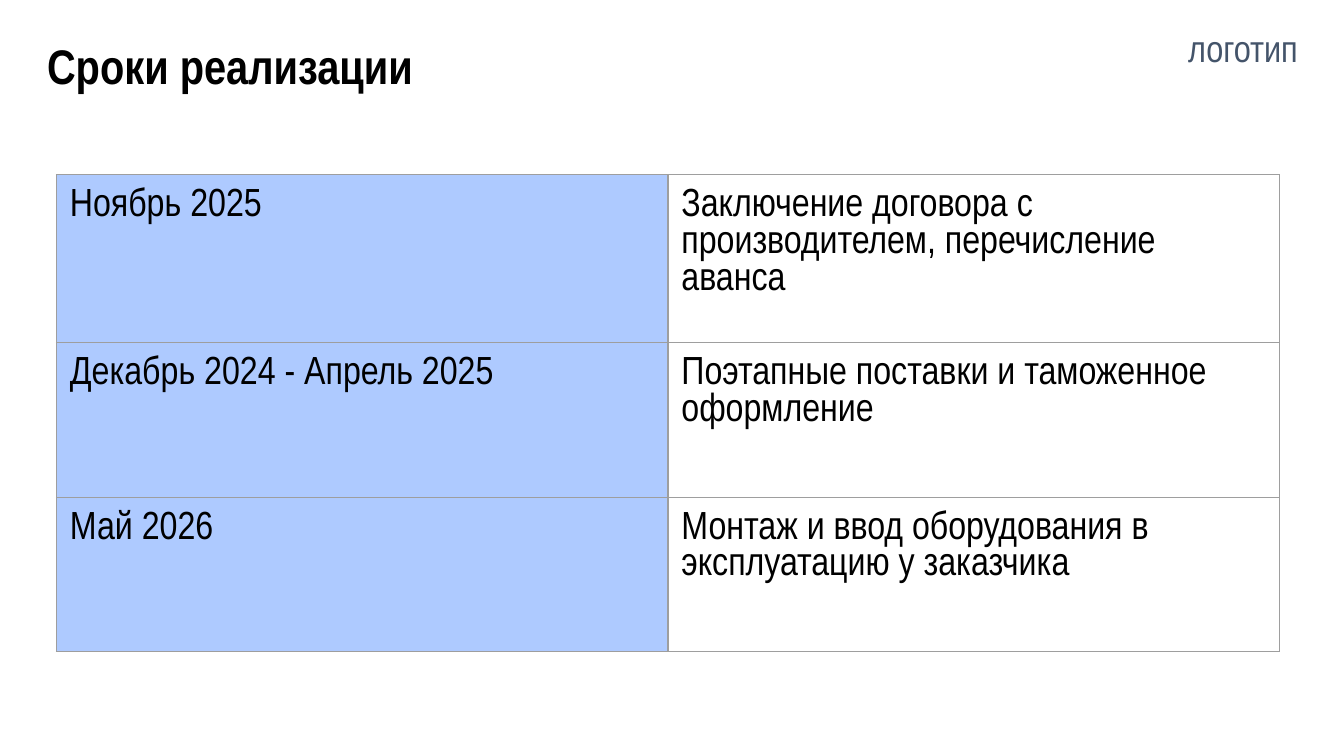
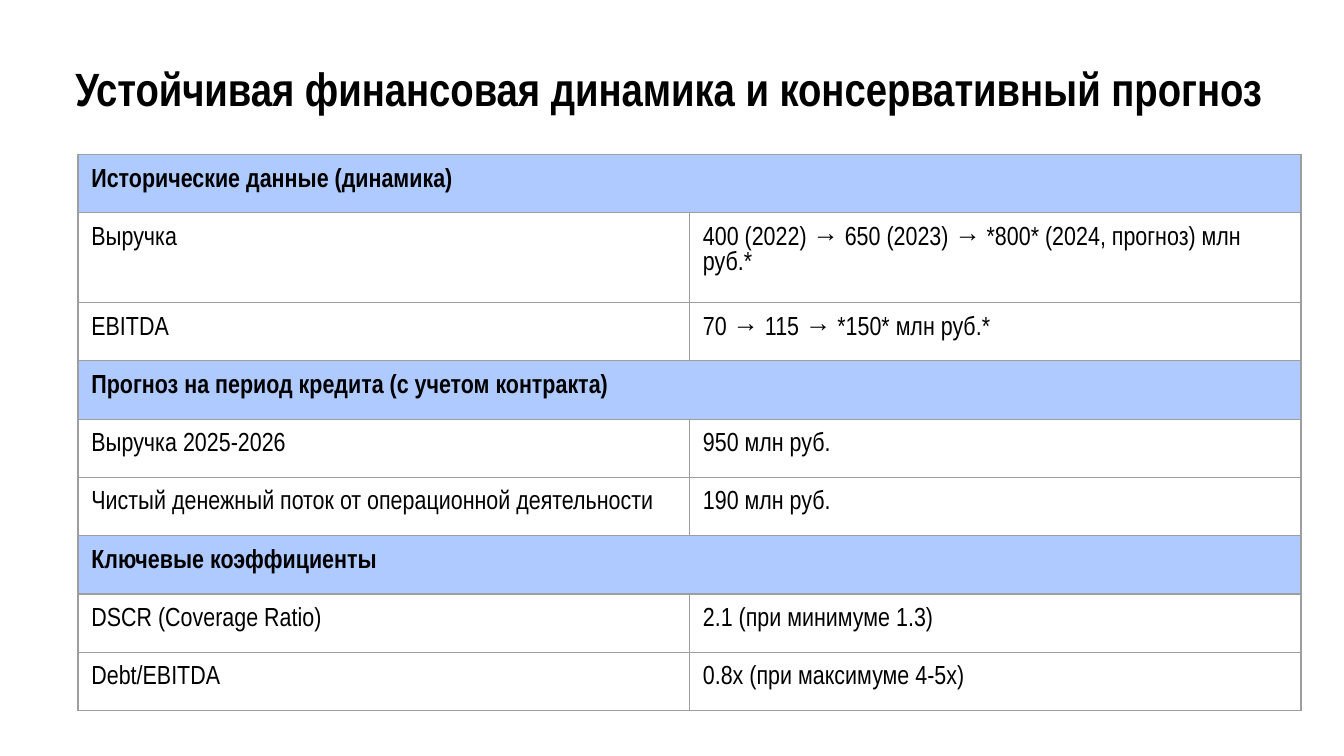
import pptx
import pptx.dml.color
import pptx.enum.text
import pptx.oxml
import pptx.oxml.ns
import pptx.util

Inches = pptx.util.Inches
Pt = pptx.util.Pt
RGBColor = pptx.dml.color.RGBColor

SLIDE_WIDTH = 10
SLIDE_HEIGHT = SLIDE_WIDTH * 9 / 16
FONT = "Arial Narrow"
BLACK = RGBColor(0x00, 0x00, 0x00)
SLATE = RGBColor(0x44, 0x54, 0x6A)
LIGHT_BLUE = RGBColor(0xAE, 0xCA, 0xFF)
BORDER_GREY = RGBColor(0x9E, 0x9E, 0x9E)
BORDER_WIDTH = Pt(0.75)
COLUMN_WIDTH = 4.55
CELL_MARGIN = 0.1
TITLE_ONLY_LAYOUT = 5

SCHEDULE_TITLE = "Сроки реализации"
LOGO_LABEL = "логотип"
SCHEDULE = [
    ("Ноябрь 2025", "Заключение договора с производителем, перечисление аванса"),
    ("Декабрь 2024 - Апрель 2025", "Поэтапные поставки и таможенное оформление"),
    ("Май 2026", "Монтаж и ввод оборудования в эксплуатацию у заказчика"),
]

FINANCE_TITLE = "Устойчивая финансовая динамика и консервативный прогноз"
# A row with a single entry is a section heading across both columns.
FINANCE = [
    ("Исторические данные (динамика)",),
    ("Выручка", "400 (2022) → 650 (2023) → *800* (2024, прогноз) млн руб.*"),
    ("EBITDA", "70 → 115 → *150* млн руб.*"),
    ("Прогноз на период кредита (с учетом контракта)",),
    ("Выручка 2025-2026", "950 млн руб."),
    ("Чистый денежный поток от операционной деятельности", "190 млн руб."),
    ("Ключевые коэффициенты",),
    ("DSCR (Coverage Ratio)", "2.1 (при минимуме 1.3)"),
    ("Debt/EBITDA", "0.8x (при максимуме 4-5x)"),
]


def write_text(text_frame, text, size, color=BLACK, bold=False, line_spacing=None):
    paragraph = text_frame.paragraphs[0]
    paragraph.alignment = pptx.enum.text.PP_ALIGN.LEFT
    if line_spacing:
        paragraph.line_spacing = line_spacing
    run = paragraph.add_run()
    run.text = text
    run.font.name = FONT
    run.font.size = Pt(size)
    run.font.bold = bold
    run.font.color.rgb = color


def format_frame(text_frame):
    text_frame.word_wrap = True
    text_frame.auto_size = pptx.enum.text.MSO_AUTO_SIZE.SHAPE_TO_FIT_TEXT
    text_frame.vertical_anchor = pptx.enum.text.MSO_ANCHOR.TOP
    text_frame.margin_left = text_frame.margin_right = Inches(0.07)
    text_frame.margin_top = text_frame.margin_bottom = Inches(0.04)


def add_titled_slide(presentation, title, left, top, width, height, size):
    slide = presentation.slides.add_slide(presentation.slide_layouts[TITLE_ONLY_LAYOUT])
    shape = slide.shapes.title
    shape.left, shape.top = Inches(left), Inches(top)
    shape.width, shape.height = Inches(width), Inches(height)
    format_frame(shape.text_frame)
    write_text(shape.text_frame, title, size, bold=True, line_spacing=0.9)
    return slide


def add_borders(cell):
    """Draw the four cell edges; they must precede the fill in the XML."""
    properties = cell._tc.get_or_add_tcPr()
    for index, edge in enumerate(("lnL", "lnR", "lnT", "lnB")):
        line = pptx.oxml.parse_xml(
            f'<a:{edge} {pptx.oxml.ns.nsdecls("a")} w="{BORDER_WIDTH}">'
            f'<a:solidFill><a:srgbClr val="{BORDER_GREY}"/></a:solidFill></a:{edge}>'
        )
        properties.insert(index, line)


def add_grid(slide, rows, left, top, row_heights, size, shade_first_column=False):
    columns = max(len(row) for row in rows)
    table = slide.shapes.add_table(
        len(rows), columns, Inches(left), Inches(top),
        Inches(columns * COLUMN_WIDTH), Inches(sum(row_heights)),
    ).table
    table.first_row = table.horz_banding = False
    for column in table.columns:
        column.width = Inches(COLUMN_WIDTH)
    for row_index, (row, height) in enumerate(zip(rows, row_heights)):
        table.rows[row_index].height = Inches(height)
        heading = len(row) < columns
        for column_index in range(columns):
            cell = table.cell(row_index, column_index)
            cell.margin_left = cell.margin_right = Inches(CELL_MARGIN)
            cell.margin_top = cell.margin_bottom = Inches(CELL_MARGIN)
            if heading or (shade_first_column and column_index == 0):
                cell.fill.solid()
                cell.fill.fore_color.rgb = LIGHT_BLUE
            else:
                cell.fill.background()
            add_borders(cell)
            if column_index < len(row):
                write_text(cell.text_frame, row[column_index], size, bold=heading)
        if heading:
            table.cell(row_index, 0).merge(table.cell(row_index, columns - 1))


def build_schedule_slide(presentation):
    slide = add_titled_slide(presentation, SCHEDULE_TITLE, 0.28, 0.28, 8.62, 0.47, 26)
    label = slide.shapes.add_textbox(Inches(8.77), Inches(0.15), Inches(1.04), Inches(0.41))
    format_frame(label.text_frame)
    write_text(label.text_frame, LOGO_LABEL, 20, color=SLATE)
    add_grid(slide, SCHEDULE, 0.42, 1.3, [1.15] * len(SCHEDULE), 21, shade_first_column=True)


def build_finance_slide(presentation):
    slide = add_titled_slide(presentation, FINANCE_TITLE, 0.49, 0.45, 9.84, 0.45, 25)
    two_line_row = 1
    row_heights = [0.52 if index == two_line_row else 0.34 for index in range(len(FINANCE))]
    add_grid(slide, FINANCE, 0.58, 1.15, row_heights, 14)


def main():
    presentation = pptx.Presentation()
    presentation.slide_width = Inches(SLIDE_WIDTH)
    presentation.slide_height = Inches(SLIDE_HEIGHT)
    build_schedule_slide(presentation)
    build_finance_slide(presentation)
    presentation.save("out.pptx")


if __name__ == "__main__":
    main()
